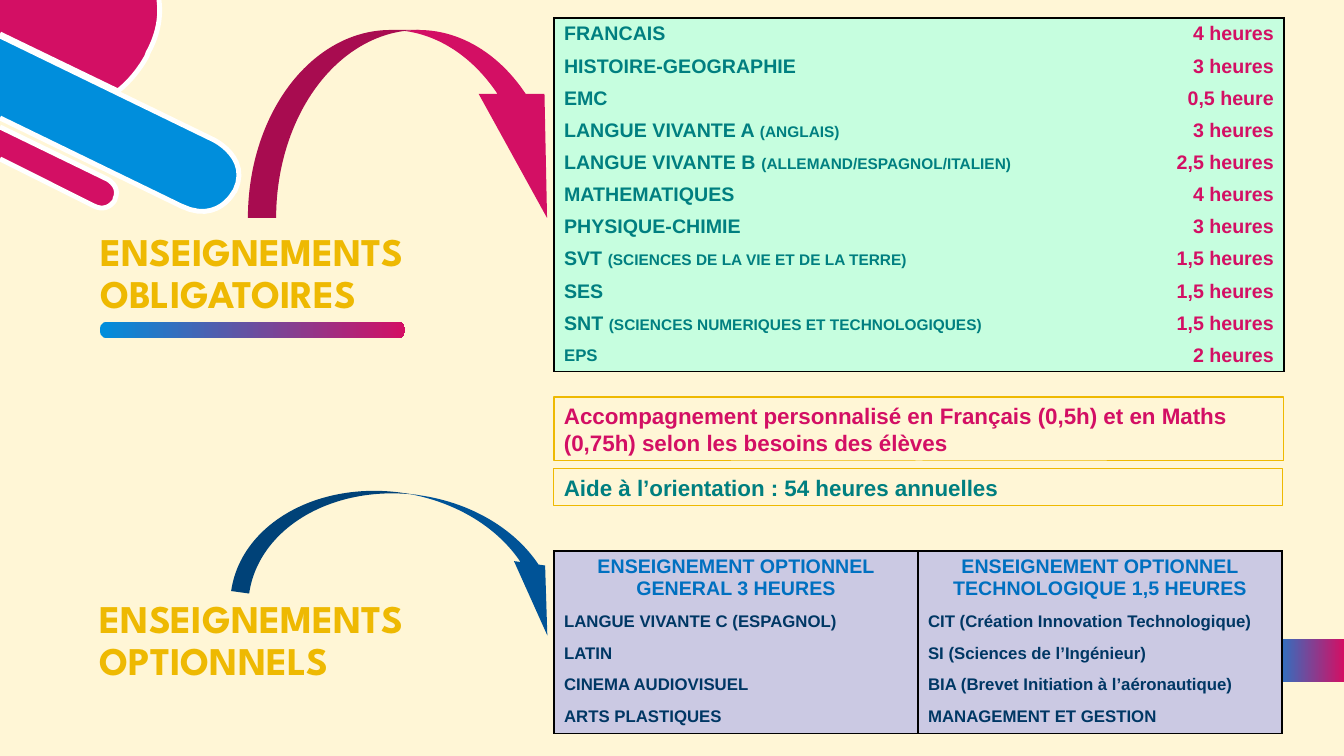
import dataclasses

import lxml.etree
import pptx
import pptx.dml.color
import pptx.enum.shapes
import pptx.enum.text
import pptx.oxml.ns
import pptx.util

SCALE = 914400 / 100.8  # EMU in one px
SHAPE = pptx.enum.shapes.MSO_SHAPE
ALIGN = pptx.enum.text.PP_ALIGN
ANCHOR = pptx.enum.text.MSO_ANCHOR
PLAIN = "{2D5ABB26-0587-4C30-8999-92F81FD0307C}"


@dataclasses.dataclass(frozen=True)
class Theme:
    cream: str = "FFF6D6"
    white: str = "FFFFFF"
    black: str = "000000"
    pink: str = "D30F64"
    sky: str = "008EDC"
    gold: str = "EEB902"
    teal: str = "007F80"
    mint: str = "C6FEDF"
    lilac: str = "CBC9E3"
    azure: str = "0070C0"
    navy: str = "003764"
    ocean: str = "005397"
    body: str = "Arial"
    display: str = "League Spartan"
    head: int = 28
    box: int = 16
    row: int = 14
    small: int = 12
    note: int = 11


T = Theme()

COURSES = [
    ("FRANCAIS", "", "4 heures"),
    ("HISTOIRE-GEOGRAPHIE", "", "3 heures"),
    ("EMC", "", "0,5 heure"),
    ("LANGUE VIVANTE A ", "(ANGLAIS)", "3 heures"),
    ("LANGUE VIVANTE B ", "(ALLEMAND/ESPAGNOL/ITALIEN)", "2,5 heures"),
    ("MATHEMATIQUES", "", "4 heures"),
    ("PHYSIQUE-CHIMIE", "", "3 heures"),
    ("SVT ", "(SCIENCES DE LA VIE ET DE LA TERRE)", "1,5 heures"),
    ("SES", "", "1,5 heures"),
    ("SNT ", "(SCIENCES NUMERIQUES ET TECHNOLOGIQUES)", "1,5 heures"),
    ("EPS", "", "2 heures"),
]
OPTIONS = [
    ("ENSEIGNEMENT OPTIONNEL GENERAL 3 HEURES",
     "ENSEIGNEMENT OPTIONNEL TECHNOLOGIQUE 1,5 HEURES"),
    ("LANGUE VIVANTE C (ESPAGNOL)", "CIT (Création Innovation Technologique)"),
    ("LATIN", "SI (Sciences de l’Ingénieur)"),
    ("CINEMA AUDIOVISUEL", "BIA (Brevet Initiation à l’aéronautique)"),
    ("ARTS PLASTIQUES", "MANAGEMENT ET GESTION"),
]


def px(*sizes):
    return [round(size * SCALE) for size in sizes]


def rgb(code):
    return pptx.dml.color.RGBColor.from_string(code)


def style(run, size, color, font=T.body):
    run.font.size = pptx.util.Pt(size)
    run.font.bold = True
    run.font.name = font
    run.font.color.rgb = rgb(color)


def paint(shape, color):
    shape.shadow.inherit = False
    shape.fill.solid()
    shape.fill.fore_color.rgb = rgb(color)
    shape.line.fill.background()


def blend(shape, start=0):
    paint(shape, T.sky)
    shape.fill.gradient()
    shape.fill.gradient_angle = 0
    for stop, color, spot in zip(shape.fill.gradient_stops, (T.sky, T.pink), (start, 1)):
        stop.color.rgb = rgb(color)
        stop.position = spot


def trace(steps, count=12):
    """Turn line ends (2 numbers) and cubic curves (6 numbers) into points."""
    points = [steps[0]]
    for step in steps[1:]:
        if len(step) == 2:
            points.append(step)
            continue
        x0, y0 = points[-1]
        x1, y1, x2, y2, x3, y3 = step
        for i in range(1, count + 1):
            t = i / count
            a, b, c, d = (1 - t) ** 3, 3 * t * (1 - t) ** 2, 3 * t * t * (1 - t), t ** 3
            points.append((a * x0 + b * x1 + c * x2 + d * x3,
                           a * y0 + b * y1 + c * y2 + d * y3))
    return points


def outline(slide, points, close=True):
    first, *rest = [px(*point) for point in points]
    pen = slide.shapes.build_freeform(*first, scale=1.0)
    pen.add_line_segments(rest, close=close)
    return pen.convert_to_shape()


def band(slide, steps, color, corner=()):
    """Fill a form that runs off the slide edge, with a white rim inside the slide."""
    points = trace(steps)
    paint(outline(slide, points + list(corner)), color)
    rim = outline(slide, points, close=False)
    rim.shadow.inherit = False
    rim.fill.background()
    rim.line.color.rgb = rgb(T.white)
    rim.line.width = pptx.util.Pt(3.5)


def decor(slide):
    band(slide, [(0, 34), (118, 91), (137, 76, 147, 56, 147, 56), (148, 53),
                 (159, 33, 161, 15, 159, 0)], T.pink, [(0, 0)])
    band(slide, [(0, 36), (214, 140), (214, 140, 251, 158, 235, 191), (234, 192),
                 (234, 192, 218, 224, 181, 206), (0, 118)], T.sky)
    band(slide, [(0, 127), (107, 179), (107, 179, 121, 186, 115, 199), (115, 200),
                 (115, 200, 108, 213, 94, 206), (0, 159)], T.pink)
    tab = trace([(1272, 682), (1344, 682), (1344, 639), (1272, 639),
                 (1272, 639, 1251, 639, 1251, 660), (1251, 661),
                 (1251, 661, 1251, 682, 1272, 682)])
    blend(outline(slide, tab), 0.12)
    rule = slide.shapes.add_shape(SHAPE.ROUNDED_RECTANGLE, *px(100, 322, 305, 16))
    rule.adjustments[0] = 0.4
    blend(rule)


def heading(shape, box, text):
    shape.left, shape.top, shape.width, shape.height = px(*box)
    frame = shape.text_frame
    frame.text = text
    frame.word_wrap = True
    frame.auto_size = pptx.enum.text.MSO_AUTO_SIZE.NONE
    frame.vertical_anchor = ANCHOR.BOTTOM
    para = frame.paragraphs[0]
    para.alignment = ALIGN.LEFT
    para.line_spacing = 0.9
    style(para.runs[0], T.head, T.gold, T.display)


def arrow(slide, box, color, bends, turn=0):
    shape = slide.shapes.add_shape(SHAPE.CURVED_UP_ARROW, *px(*box))
    paint(shape, color)
    for i, bend in enumerate(bends):
        shape.adjustments[i] = bend
    shape.rotation = turn
    shape.element.spPr.xfrm.set("flipV", "1")


def notice(slide, box, text, color):
    shape = slide.shapes.add_shape(SHAPE.RECTANGLE, *px(*box))
    shape.shadow.inherit = False
    shape.fill.background()
    shape.line.color.rgb = rgb(T.gold)
    shape.line.width = pptx.util.Pt(0.75)
    frame = shape.text_frame
    frame.text = text
    frame.word_wrap = True
    frame.vertical_anchor = ANCHOR.TOP
    frame.paragraphs[0].alignment = ALIGN.LEFT
    style(frame.paragraphs[0].runs[0], T.box, color)


def grid(slide, left, top, widths, heights):
    frame = slide.shapes.add_table(len(heights), len(widths),
                                   *px(left, top, sum(widths), sum(heights)))
    table = frame.table
    table.first_row = table.horz_banding = False
    table._tbl.tblPr.find(pptx.oxml.ns.qn("a:tableStyleId")).text = PLAIN
    for column, width in zip(table.columns, widths):
        column.width = px(width)[0]
    for row, height in zip(table.rows, heights):
        row.height = px(height)[0]
    return table


def cell(spot, spans, color, fill, align, sides):
    """Write (text, size) spans in a cell and rule the sides named by L, R, T, B."""
    para = spot.text_frame.paragraphs[0]
    para.alignment = align
    for text, size in spans:
        run = para.add_run()
        run.text = text
        style(run, size, color)
    spot.vertical_anchor = ANCHOR.MIDDLE
    qn = pptx.oxml.ns.qn
    props = spot._tc.get_or_add_tcPr()
    for side in sides:
        line = lxml.etree.SubElement(props, qn("a:ln" + side), w="12700")
        solid = lxml.etree.SubElement(line, qn("a:solidFill"))
        lxml.etree.SubElement(solid, qn("a:srgbClr"), val=T.black)
    spot.fill.solid()
    spot.fill.fore_color.rgb = rgb(fill)


def ends(i, count):
    return "T" * (i == 0) + "B" * (i == count - 1)


def courses(slide, left, top):
    count = len(COURSES)
    table = grid(slide, left, top, [477, 253], [32] * count)
    for i, (name, note, hours) in enumerate(COURSES):
        size = T.small if name == "EPS" else T.row
        spans = [(name, size)] + ([(note, T.note)] if note else [])
        cell(table.cell(i, 0), spans, T.teal, T.mint, ALIGN.LEFT, "L" + ends(i, count))
        cell(table.cell(i, 1), [(hours, T.row)], T.pink, T.mint, ALIGN.RIGHT,
             "R" + ends(i, count))


def options(slide, left, top):
    count = len(OPTIONS)
    table = grid(slide, left, top, [364] * 2, [54] + [32] * (count - 1))
    for i, names in enumerate(OPTIONS):
        size, color, align = ((T.small, T.navy, ALIGN.LEFT) if i
                              else (T.row, T.azure, ALIGN.CENTER))
        for j, name in enumerate(names):
            cell(table.cell(i, j), [(name, size)], color, T.lilac, align,
                 "LR" + ends(i, count))


def main():
    deck = pptx.Presentation()
    deck.slide_width, deck.slide_height = px(1344, 756)
    slide = deck.slides.add_slide(deck.slide_layouts.get_by_name("Title Only"))
    slide.background.fill.solid()
    slide.background.fill.fore_color.rgb = rgb(T.cream)
    decor(slide)
    heading(slide.shapes.title, (90, 203, 375, 119), "ENSEIGNEMENTS OBLIGATOIRES")
    courses(slide, 554, 18)
    box = (90, 570, 375, 119)
    heading(slide.shapes.add_textbox(*px(*box)), box, "ENSEIGNEMENTS OPTIONNELS")
    arrow(slide, (248, 30, 332, 188), T.pink, (0.15, 0.35, 0.66))
    arrow(slide, (238, 494, 335, 121), T.ocean, (0.15, 0.26, 0.57), 8)
    options(slide, 554, 551)
    notice(slide, (554, 397, 730, 64), "Accompagnement personnalisé en Français (0,5h) "
           "et en Maths (0,75h) selon les besoins des élèves", T.pink)
    notice(slide, (554, 469, 729, 37), "Aide à l’orientation : 54 heures annuelles", T.teal)
    deck.save("out.pptx")


if __name__ == "__main__":
    main()
